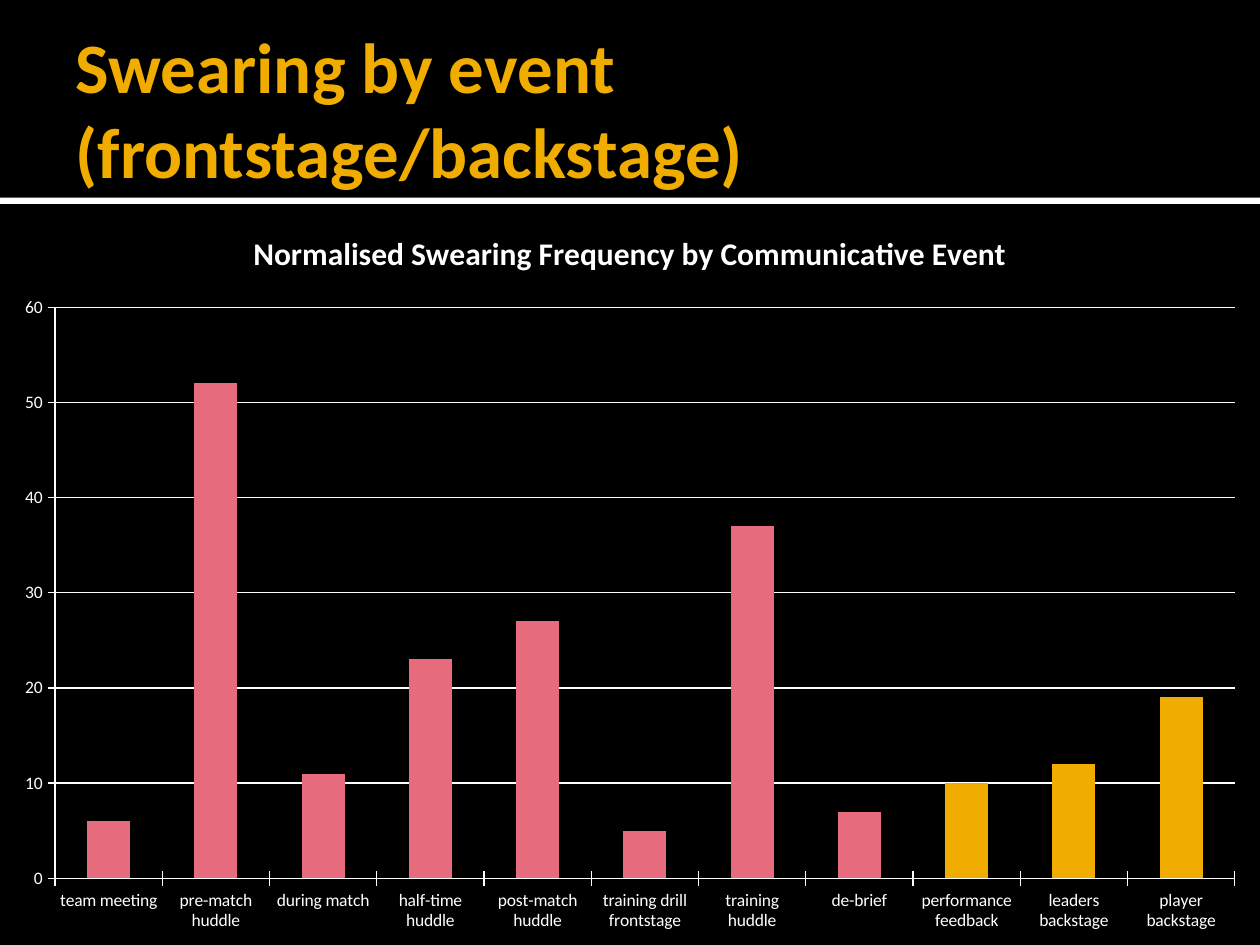
from pptx import Presentation
from pptx.chart.data import CategoryChartData
from pptx.dml.color import RGBColor
from pptx.enum.chart import XL_CHART_TYPE, XL_TICK_MARK
from pptx.enum.shapes import MSO_SHAPE
from pptx.enum.text import MSO_ANCHOR, MSO_AUTO_SIZE, PP_ALIGN
from pptx.util import Pt

COLUMNS = XL_CHART_TYPE.COLUMN_CLUSTERED
CROSS = XL_TICK_MARK.CROSS
RECTANGLE = MSO_SHAPE.RECTANGLE
MIDDLE = MSO_ANCHOR.MIDDLE
NO_FIT = MSO_AUTO_SIZE.NONE
LEFT = PP_ALIGN.LEFT

BLACK = RGBColor(0x00, 0x00, 0x00)
WHITE = RGBColor(0xFF, 0xFF, 0xFF)
GOLD = RGBColor(0xF0, 0xAD, 0x00)
PINK = RGBColor(0xE6, 0x6C, 0x7D)

SLIDE_WIDTH, SLIDE_HEIGHT = 720, 540
HEADER_HEIGHT = 113
RULE_HEIGHT = 3.6
TITLE_ONLY = 5

FRONTSTAGE = {
    "team meeting": 6,
    "pre-match huddle": 52,
    "during match": 11,
    "half-time huddle": 23,
    "post-match huddle": 27,
    "training drill frontstage": 5,
    "training huddle": 37,
    "de-brief": 7,
}
BACKSTAGE = {
    "performance feedback": 10,
    "leaders backstage": 12,
    "player backstage": 19,
}


def apply_format(target, values):
    for name, value in values.items():
        setattr(target, name, value)


class SlideBuilder:
    font_name = "Calibri"

    def __init__(self, slide):
        self.slide = slide

    def style_font(self, font, size, color, bold=False):
        apply_format(font, {"name": self.font_name, "size": Pt(size), "bold": bold})
        font.color.rgb = color

    def background(self, color):
        fill = self.slide.background.fill
        fill.solid()
        fill.fore_color.rgb = color

    def title(self, text, left, top, width, height):
        shape = self.slide.shapes.title
        apply_format(shape, {"left": Pt(left), "top": Pt(top),
                             "width": Pt(width), "height": Pt(height)})
        frame = shape.text_frame
        apply_format(frame, {
            "text": text, "word_wrap": True, "auto_size": NO_FIT,
            "vertical_anchor": MIDDLE, "margin_left": Pt(7.2),
            "margin_right": Pt(3.6), "margin_top": Pt(3.6), "margin_bottom": Pt(3.6),
        })
        paragraph = frame.paragraphs[0]
        paragraph.alignment = LEFT
        self.style_font(paragraph.runs[0].font, 40.5, GOLD, bold=True)

    def bar(self, left, top, width, height, color):
        shape = self.slide.shapes.add_shape(
            RECTANGLE, Pt(left), Pt(top), Pt(width), Pt(height))
        shape.shadow.inherit = False
        shape.fill.solid()
        shape.fill.fore_color.rgb = color
        shape.line.fill.background()

    def column_chart(self, title, groups, left, top, width, height):
        """Draw one series; groups is a list of (values by category, colour)."""
        columns = [(name, value, color) for values, color in groups
                   for name, value in values.items()]
        data = CategoryChartData()
        data.categories = [name for name, _, _ in columns]
        data.add_series("Series 1", [value for _, value, _ in columns])
        chart = self.slide.shapes.add_chart(
            COLUMNS, Pt(left), Pt(top), Pt(width), Pt(height), data).chart
        self.style_font(chart.font, 10, WHITE)
        chart.has_legend = False

        # Chart title
        chart.has_title = True
        frame = chart.chart_title.text_frame
        frame.text = title
        self.style_font(frame.paragraphs[0].runs[0].font, 18, WHITE, bold=True)

        # Axes and gridlines
        apply_format(chart.value_axis, {"minimum_scale": 0, "maximum_scale": 60,
                                        "major_unit": 10, "has_major_gridlines": True})
        chart.category_axis.has_major_gridlines = False
        for axis in (chart.category_axis, chart.value_axis):
            axis.major_tick_mark = CROSS
            self.style_line(axis.format.line)
        self.style_line(chart.value_axis.major_gridlines.format.line)

        # Columns, coloured by group
        plot = chart.plots[0]
        apply_format(plot, {"gap_width": 150, "vary_by_categories": False})
        series = plot.series[0]
        series_color = columns[-1][2]
        series.format.fill.solid()
        series.format.fill.fore_color.rgb = series_color
        for index, (_, _, color) in enumerate(columns):
            if color != series_color:
                fill = series.points[index].format.fill
                fill.solid()
                fill.fore_color.rgb = color

    def style_line(self, line):
        line.color.rgb = WHITE
        line.width = Pt(0.75)


def main():
    presentation = Presentation()
    presentation.slide_width = Pt(SLIDE_WIDTH)
    presentation.slide_height = Pt(SLIDE_HEIGHT)
    slide = presentation.slides.add_slide(presentation.slide_layouts[TITLE_ONLY])
    builder = SlideBuilder(slide)

    # Header
    builder.background(BLACK)
    builder.title("Swearing by event (frontstage/backstage)", 36, 12.5, 648, 98.5)
    builder.bar(0, HEADER_HEIGHT, SLIDE_WIDTH, RULE_HEIGHT, WHITE)

    # Chart fills the rest of the slide
    chart_top = HEADER_HEIGHT + RULE_HEIGHT
    builder.column_chart(
        "Normalised Swearing Frequency by Communicative Event",
        [(FRONTSTAGE, PINK), (BACKSTAGE, GOLD)],
        0, chart_top, SLIDE_WIDTH, SLIDE_HEIGHT - chart_top)

    presentation.save("out.pptx")


if __name__ == "__main__":
    main()
